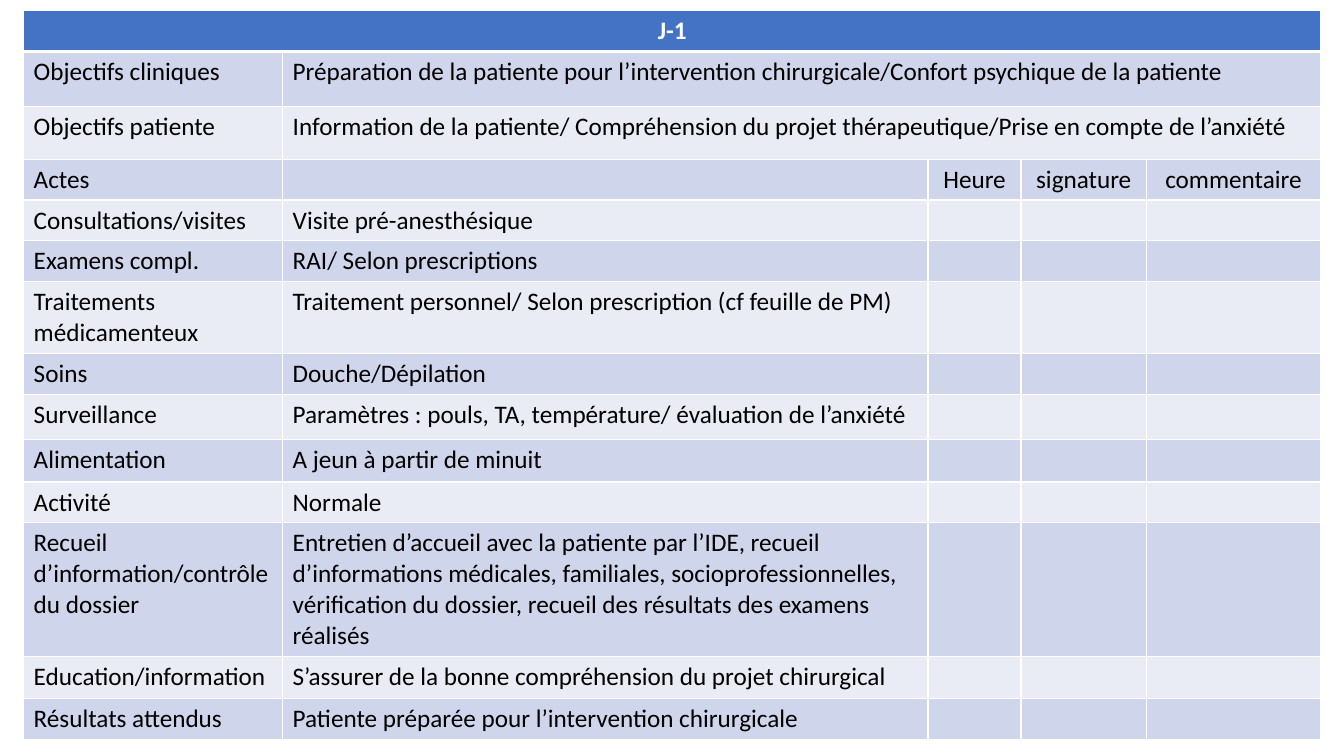
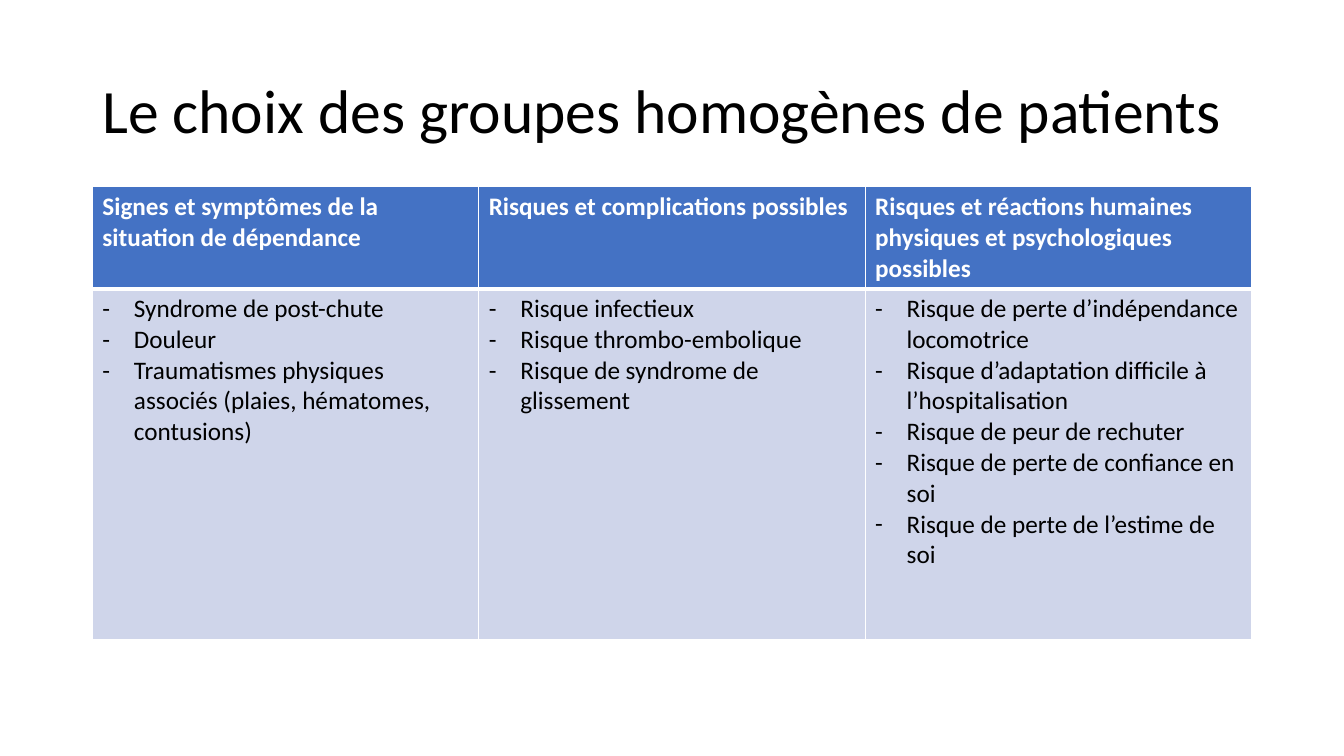
from lxml.etree import SubElement
from pptx import Presentation
from pptx.dml.color import RGBColor
from pptx.enum.text import MSO_ANCHOR, PP_ALIGN
from pptx.oxml.ns import qn
from pptx.util import Pt

WHITE = RGBColor(0xFF, 0xFF, 0xFF)
BLACK = RGBColor(0x00, 0x00, 0x00)
BLUE = RGBColor(0x44, 0x72, 0xC4)
BANDS = (RGBColor(0xCF, 0xD5, 0xEA), RGBColor(0xE9, 0xEB, 0xF5))
FONT = "Calibri"
INDENT = 22.5

PLAN = [
    ["J-1"],
    ["Objectifs cliniques", "Préparation de la patiente pour l’intervention chirurgicale/Confort psychique de la patiente"],
    ["Objectifs patiente", "Information de la patiente/ Compréhension du projet thérapeutique/Prise en compte de l’anxiété"],
    ["Actes", "", "Heure", "signature", "commentaire"],
    ["Consultations/visites", "Visite pré-anesthésique"],
    ["Examens compl.", "RAI/ Selon prescriptions"],
    ["Traitements médicamenteux", "Traitement personnel/ Selon prescription (cf feuille de PM)"],
    ["Soins", "Douche/Dépilation"],
    ["Surveillance", "Paramètres : pouls, TA, température/ évaluation de l’anxiété"],
    ["Alimentation", "A jeun à partir de minuit"],
    ["Activité", "Normale"],
    ["Recueil d’information/contrôle du dossier",
     "Entretien d’accueil avec la patiente par l’IDE, recueil d’informations médicales, familiales, "
     "socioprofessionnelles, vérification du dossier, recueil des résultats des examens réalisés"],
    ["Education/information", "S’assurer de la bonne compréhension du projet chirurgical"],
    ["Résultats attendus", "Patiente préparée pour l’intervention chirurgicale"],
]
PLAN_COLS = [185, 461, 66.5, 89.5, 124.5]
PLAN_ROWS = [28.5, 39.5, 37.5, 29.2, 29.2, 29.2, 51.2, 29.2, 32.2, 30.5, 29.2, 95.2, 30.5, 28.5]

GROUPS = {
    "Signes et symptômes de la situation de dépendance": [
        "Syndrome de post-chute",
        "Douleur",
        "Traumatismes physiques associés (plaies, hématomes, contusions)",
    ],
    "Risques et complications possibles": [
        "Risque infectieux",
        "Risque thrombo-embolique",
        "Risque de syndrome de glissement",
    ],
    "Risques et réactions humaines physiques et psychologiques possibles": [
        "Risque de perte d’indépendance locomotrice",
        "Risque d’adaptation difficile à l’hospitalisation",
        "Risque de peur de rechuter",
        "Risque de perte de confiance en soi",
        "Risque de perte de l’estime de soi",
    ],
}


class Deck:
    """Holds the shared style and the current slide."""

    def __init__(self):
        self.show = Presentation()
        self.show.slide_width, self.show.slide_height = Pt(960), Pt(540)
        self.slide = None

    def page(self):
        self.slide = self.show.slides.add_slide(self.show.slide_layouts[6])

    def add_text(self, para, text, size=18, color=BLACK, bold=False):
        run = para.add_run()
        run.text = text
        font = run.font
        font.name, font.size, font.bold = FONT, Pt(size), bold
        font.color.rgb = color

    def title(self, text, left, top, width, height):
        frame = self.slide.shapes.add_textbox(Pt(left), Pt(top), Pt(width), Pt(height)).text_frame
        frame.word_wrap = True
        frame.vertical_anchor = MSO_ANCHOR.MIDDLE
        para = frame.paragraphs[0]
        para.line_spacing = 0.9
        self.add_text(para, text, 44)

    def grid(self, left, top, cols, rows):
        frame = self.slide.shapes.add_table(
            len(rows), len(cols), Pt(left), Pt(top), Pt(sum(cols)), Pt(sum(rows)))
        table = frame.table
        for col, width in zip(table.columns, cols):
            col.width = Pt(width)
        for index, (row, height) in enumerate(zip(table.rows, rows)):
            row.height = Pt(height)
            for cell in row.cells:
                cell.fill.solid()
                cell.fill.fore_color.rgb = BANDS[(index - 1) % 2] if index else BLUE
                self.edge(cell, index == 0)
        return table

    def edge(self, cell, head):
        props = cell._tc.get_or_add_tcPr()
        for place, side in enumerate("LRTB"):
            width = 3 if head and side == "B" else 1
            line = SubElement(props, qn(f"a:ln{side}"), w=str(Pt(width)))
            fill = SubElement(line, qn("a:solidFill"))
            SubElement(fill, qn("a:srgbClr"), val=str(WHITE))
            props.insert(place, line)

    def label(self, cell, text, head=False, align=PP_ALIGN.LEFT):
        para = cell.text_frame.paragraphs[0]
        para.alignment = align
        self.add_text(para, text, color=WHITE if head else BLACK, bold=head)

    def bullets(self, cell, items):
        frame = cell.text_frame
        for index, item in enumerate(items):
            para = frame.add_paragraph() if index else frame.paragraphs[0]
            props = para._p.get_or_add_pPr()
            props.set("marL", str(Pt(INDENT)))
            props.set("indent", str(-Pt(INDENT)))
            SubElement(props, qn("a:buFont"), typeface=FONT)
            SubElement(props, qn("a:buChar"), char="-")
            self.add_text(para, item)


def main():
    deck = Deck()

    deck.page()
    table = deck.grid(16.9, 7.5, PLAN_COLS, PLAN_ROWS)
    for row, first in ((0, 0), (1, 1), (2, 1)):
        table.cell(row, first).merge(table.cell(row, 4))
    for row, texts in enumerate(PLAN):
        for col, text in enumerate(texts):
            if text:
                mid = row == 0 or col > 1
                deck.label(table.cell(row, col), text, row == 0,
                           PP_ALIGN.CENTER if mid else PP_ALIGN.LEFT)

    deck.page()
    deck.title("Le choix des groupes homogènes de patients", 66, 28.75, 828, 104.4)
    table = deck.grid(66, 133.2, [276] * 3, [73, 250.5])
    for col, (head, items) in enumerate(GROUPS.items()):
        deck.label(table.cell(0, col), head, True)
        deck.bullets(table.cell(1, col), items)

    deck.show.save("out.pptx")


if __name__ == "__main__":
    main()
